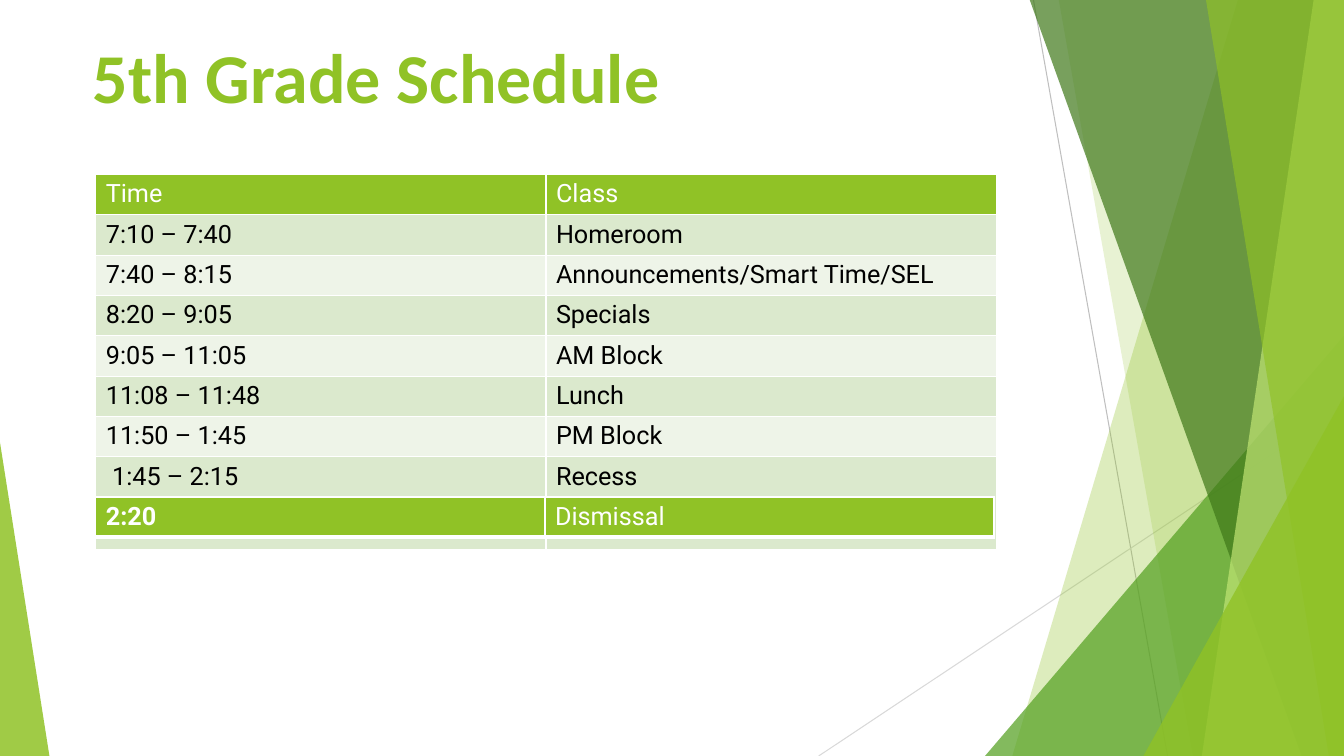
"""Build the class schedule slide with its faceted green border."""
from dataclasses import dataclass

from lxml import etree
from pptx import Presentation
from pptx.dml.color import RGBColor
from pptx.enum.shapes import MSO_CONNECTOR, MSO_SHAPE
from pptx.oxml.ns import qn
from pptx.util import Pt

PX = 9144
WIDE, HIGH = 1333, 750
TOP = -1
LINE = MSO_CONNECTOR.STRAIGHT
PEAK = MSO_SHAPE.ISOSCELES_TRIANGLE
EDGES = ("a:lnL", "a:lnR", "a:lnT", "a:lnB")


@dataclass(frozen=True)
class Theme:
    lime: str = "90C226"
    leaf: str = "54A021"
    moss: str = "3F7819"
    pale: str = "C0E474"
    gray: str = "BFBFBF"
    mist: str = "D9D9D9"
    white: str = "FFFFFF"
    black: str = "000000"
    bands: tuple[str, str] = ("DBE9CD", "EEF4E8")
    head: str = "Calibri"
    body: str = "Roboto"
    big: int = 50
    small: int = 18


@dataclass(frozen=True)
class Ray:
    start: tuple[int, int]
    end: tuple[int, int]
    color: str


@dataclass(frozen=True)
class Facet:
    upper: int
    lower: int
    color: str
    alpha: int


@dataclass(frozen=True)
class Wedge:
    left: int
    top: int
    width: int
    tip: int
    color: str
    alpha: int


@dataclass(frozen=True)
class Row:
    time: str
    task: str
    height: int
    fill: str
    ink: str
    bold: bool = False


T = Theme()
RAYS = [
    Ray((1025, 0), (1158, HIGH), T.gray),
    Ray((WIDE, 403), (812, HIGH), T.mist),
]
PANES = [
    Facet(1228, 1004, T.lime, 30),
    Facet(1050, 1183, T.lime, 20),
    Wedge(977, 333, 356, 1, T.leaf, 72),
    Facet(1021, 1291, T.moss, 70),
    Facet(1303, 1192, T.pale, 70),
    Facet(1196, 1318, T.lime, 65),
    Wedge(1134, 393, 199, 1, T.lime, 80),
    Wedge(0, 439, 49, 0, T.lime, 85),
]
SLOTS = [
    ("7:10 – 7:40", "Homeroom"),
    ("7:40 – 8:15", "Announcements/Smart Time/SEL"),
    ("8:20 – 9:05", "Specials"),
    ("9:05 – 11:05", "AM Block"),
    ("11:08 – 11:48", "Lunch"),
    ("11:50 – 1:45", "PM Block"),
    (" 1:45 – 2:15", "Recess"),
]


def tint(shape, color: str, alpha: int) -> None:
    """Give a shape a see-through fill and no outline."""
    shape.shadow.inherit = False
    shape.line.fill.background()
    shape.fill.solid()
    shape.fill.fore_color.rgb = RGBColor.from_string(color)
    tone = shape.fill._xPr.find(qn("a:solidFill"))[0]
    etree.SubElement(tone, qn("a:alpha"), val=str(alpha * 1000))


def draw_ray(slide, ray: Ray) -> None:
    """Draw one thin line."""
    ends = [v * PX for v in ray.start + ray.end]
    line = slide.shapes.add_connector(LINE, *ends)
    line.line.color.rgb = RGBColor.from_string(ray.color)
    line.line.width = Pt(0.75)
    etree.SubElement(line._element.spPr, qn("a:effectLst"))


def draw_facet(slide, pane: Facet) -> None:
    """Draw a slanted pane that reaches the right edge."""
    form = slide.shapes.build_freeform(pane.upper, TOP, scale=PX)
    form.add_line_segments(
        [(WIDE, TOP), (WIDE, HIGH), (pane.lower, HIGH)], close=True)
    tint(form.convert_to_shape(), pane.color, pane.alpha)


def draw_wedge(slide, pane: Wedge) -> None:
    """Draw a right triangle that stands on the lower edge."""
    box = (pane.left, pane.top, pane.width, HIGH - pane.top)
    shape = slide.shapes.add_shape(PEAK, *[v * PX for v in box])
    shape.adjustments[0] = pane.tip
    tint(shape, pane.color, pane.alpha)


def add_run(para, text: str, font: str, size: int, color: str, bold: bool) -> None:
    """Add one styled run to a paragraph."""
    run = para.add_run()
    run.text = text
    run.font.name = font
    run.font.size = Pt(size)
    run.font.bold = bold
    run.font.color.rgb = RGBColor.from_string(color)


def draw_title(slide, text: str) -> None:
    """Draw the slide heading."""
    box = slide.shapes.add_textbox(35 * PX, 28 * PX, 780 * PX, 94 * PX)
    frame = box.text_frame
    frame.word_wrap = True
    frame.margin_left = 57 * PX
    add_run(frame.paragraphs[0], text, T.head, T.big, T.lime, True)


def edge_cell(cell, base: int) -> None:
    """Put white borders on a cell, with its own base width."""
    props = cell._tc.get_or_add_tcPr()
    for spot, name in enumerate(EDGES):
        width = Pt(base if name == "a:lnB" else 1)
        edge = etree.Element(qn(name), w=str(width))
        fill = etree.SubElement(edge, qn("a:solidFill"))
        etree.SubElement(fill, qn("a:srgbClr"), val=T.white)
        props.insert(spot, edge)


def draw_table(slide, top: int, width: int, rows: list[Row], base: int) -> None:
    """Draw a table with two equal columns."""
    tall = sum(row.height for row in rows)
    frame = slide.shapes.add_table(
        len(rows), 2, 95 * PX, top * PX, width * PX, tall * PX)
    table = frame.table
    for line, row in zip(table.rows, rows):
        line.height = row.height * PX
        texts = ((row.time, row.bold), (row.task, False))
        for cell, (text, bold) in zip(line.cells, texts):
            cell.fill.solid()
            cell.fill.fore_color.rgb = RGBColor.from_string(row.fill)
            edge_cell(cell, base)
            para = cell.text_frame.paragraphs[0]
            add_run(para, text, T.body, T.small, row.ink, bold)


def main() -> None:
    """Build and save the slide."""
    deck = Presentation()
    deck.slide_width, deck.slide_height = WIDE * PX, HIGH * PX
    slide = deck.slides.add_slide(deck.slide_layouts[6])
    for ray in RAYS:
        draw_ray(slide, ray)
    for pane in PANES:
        if isinstance(pane, Facet):
            draw_facet(slide, pane)
        else:
            draw_wedge(slide, pane)
    draw_title(slide, "5th Grade Schedule")
    rows = [Row("Time", "Class", 39, T.lime, T.white)]
    for spot, (time, task) in enumerate(SLOTS):
        height = 92 if spot == len(SLOTS) - 1 else 40
        rows.append(Row(time, task, height, T.bands[spot % 2], T.black))
    draw_table(slide, 173, 893, rows, 1)
    close = Row("2:20", "Dismissal", 40, T.lime, T.white, True)
    draw_table(slide, 493, 891, [close], 3)
    deck.save("out.pptx")


if __name__ == "__main__":
    main()
